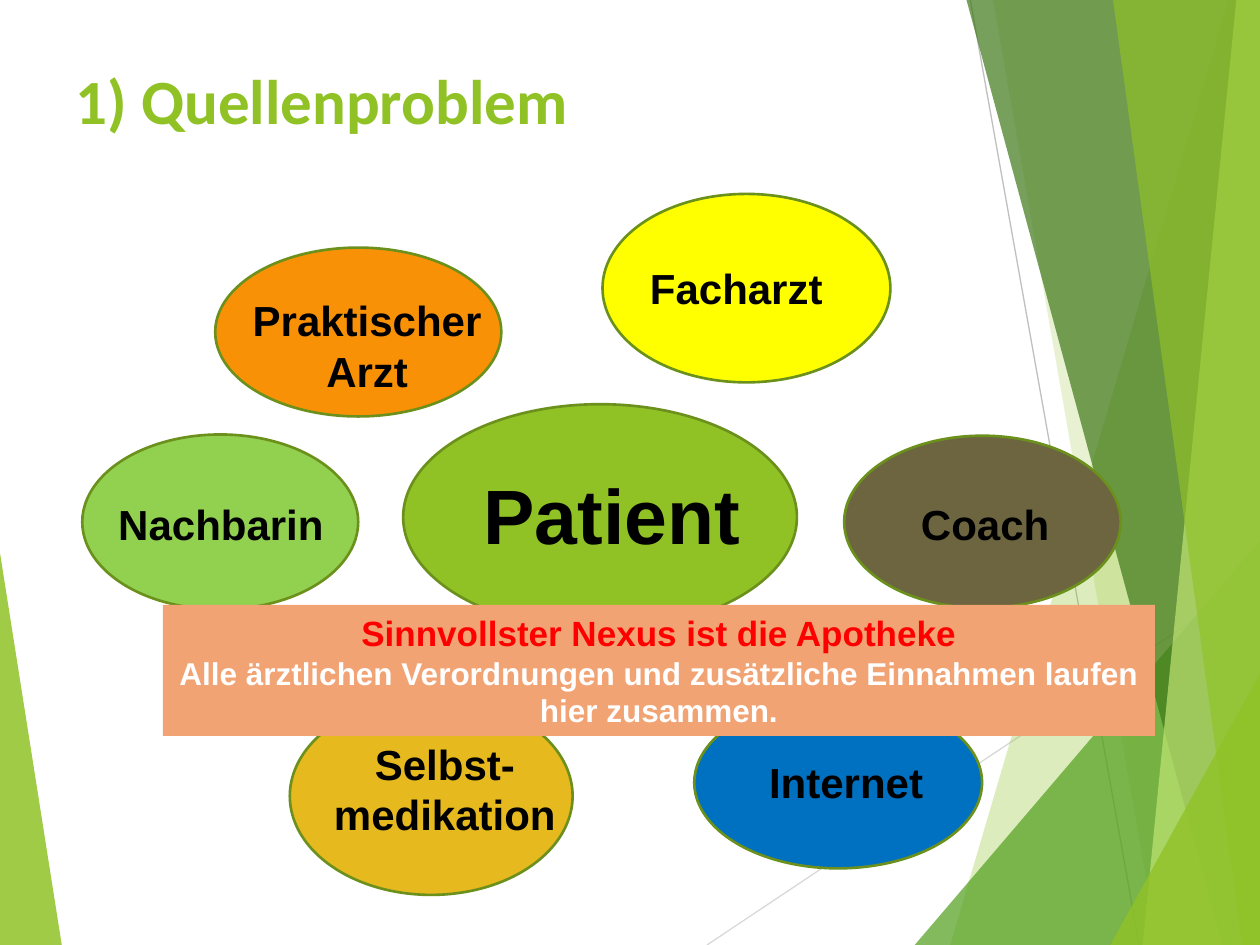
from dataclasses import dataclass

from lxml import etree
from pptx import Presentation
from pptx.dml.color import RGBColor
from pptx.enum.shapes import MSO_CONNECTOR, MSO_SHAPE
from pptx.enum.text import MSO_ANCHOR, PP_ALIGN
from pptx.oxml.ns import qn
from pptx.util import Pt

STRAIGHT = MSO_CONNECTOR.STRAIGHT
ELLIPSE, RECTANGLE = MSO_SHAPE.OVAL, MSO_SHAPE.RECTANGLE
TOP, MIDDLE = MSO_ANCHOR.TOP, MSO_ANCHOR.MIDDLE
LEFT, CENTER = PP_ALIGN.LEFT, PP_ALIGN.CENTER
WIDTH, HEIGHT = 720, 540

Point = tuple[float, float]
Box = tuple[float, float, float, float]


@dataclass(frozen=True)
class Theme:
    green: str = "90C226"
    leaf: str = "54A021"
    forest: str = "3F7819"
    lime: str = "C0E474"
    outline: str = "6B901C"
    black: str = "000000"
    white: str = "FFFFFF"
    red: str = "FF0000"
    salmon: str = "F1A374"
    title_font: str = "Calibri"
    body_font: str = "Arial"
    title_size: int = 36
    patient_size: int = 44
    source_size: int = 24
    headline_size: int = 20
    detail_size: int = 18


THEME = Theme()


@dataclass(frozen=True)
class Facet:
    points: list[Point]
    color: str
    opacity: int


@dataclass(frozen=True)
class Line:
    start: Point
    end: Point
    color: str


@dataclass(frozen=True)
class Label:
    text: str
    box: Box
    size: int = THEME.source_size
    align: PP_ALIGN = CENTER
    color: str = THEME.black
    font: str = THEME.body_font


@dataclass(frozen=True)
class Source:
    ellipse: Box
    fill: str
    label: Label


def panel(top_x: float, bottom_x: float) -> list[Point]:
    """Full-height band that reaches the right edge of the slide."""
    return [(top_x, 0), (bottom_x, HEIGHT), (WIDTH, HEIGHT), (WIDTH, 0)]


def corner(bottom_x: float, edge_y: float, edge_x: float = WIDTH) -> list[Point]:
    """Triangle in a bottom corner of the slide."""
    return [(bottom_x, HEIGHT), (edge_x, edge_y), (edge_x, HEIGHT)]


LEFT_FACET = Facet(corner(35.3, 316, 0), THEME.green, 85)
RIGHT_FACETS = [
    Facet(panel(702, 543), THEME.green, 30),
    Facet(panel(567.5, 661.5), THEME.green, 20),
    Facet(corner(522.7, 309), THEME.leaf, 72),
    Facet(panel(552.3, 698.5), THEME.forest, 70),
    Facet(panel(706.5, 653), THEME.lime, 70),
    Facet(panel(636, 710), THEME.green, 65),
    Facet(corner(634.5, 385), THEME.green, 80),
]
LINES = [
    Line((404, HEIGHT), (WIDTH, 329), "D9D9D9"),
    Line((554.5, 0), (651, HEIGHT), "BFBFBF"),
]
TITLE = Label("1) Quellenproblem", (36, 31.5, 648, 93.5), THEME.title_size,
              LEFT, THEME.green, THEME.title_font)
SOURCES = [
    Source((230.4, 231, 225, 129), THEME.green,
           Label("Patient", (269.3, 263.5, 255, 60.5), THEME.patient_size, LEFT)),
    Source((123, 141.5, 163.5, 96.5), "F99107",
           Label("Praktischer Arzt", (133, 165, 153.5, 65.5))),
    Source((482.4, 249, 158, 98.5), "6D6540",
           Label("Coach", (509, 281.5, 108, 36))),
    Source((47, 248.3, 157.7, 100), "92D050",
           Label("Nachbarin", (60.5, 281.5, 134.6, 36), align=LEFT)),
    Source((396.7, 398.2, 164.5, 98), "0070C0",
           Label("Internet", (425.5, 428.5, 116, 36))),
    Source((344.3, 110.8, 164.5, 107.7), "FFFF00",
           Label("Facharzt", (364.3, 146.3, 121.7, 36), align=LEFT)),
    Source((165.6, 398.4, 161.6, 113), "E6B91E",
           Label("Selbst-medikation", (181.5, 418.3, 145.4, 65.5))),
]
BANNER_BOX = (93, 345.6, 567, 75)
BANNER_LINES = [
    ("Sinnvollster Nexus ist die Apotheke", THEME.headline_size, THEME.red),
    ("Alle ärztlichen Verordnungen und zusätzliche Einnahmen laufen hier zusammen.",
     THEME.detail_size, THEME.white),
]


def to_points(values) -> list[Pt]:
    return [Pt(value) for value in values]


def paint(shape, color: str) -> None:
    shape.shadow.inherit = False
    shape.fill.solid()
    shape.fill.fore_color.rgb = RGBColor.from_string(color)


def draw_facet(shapes, facet: Facet) -> None:
    vertices = [to_points(point) for point in facet.points]
    builder = shapes.build_freeform(*vertices[0], scale=1.0)
    builder.add_line_segments(vertices[1:], close=True)
    shape = builder.convert_to_shape()
    paint(shape, facet.color)
    shape.line.fill.background()
    color = shape.element.spPr.find(qn("a:solidFill")).find(qn("a:srgbClr"))
    etree.SubElement(color, qn("a:alpha"), val=str(facet.opacity * 1000))


def draw_line(shapes, line: Line) -> None:
    connector = shapes.add_connector(STRAIGHT, *to_points(line.start + line.end))
    connector.line.width = Pt(0.75)
    connector.line.color.rgb = RGBColor.from_string(line.color)
    etree.SubElement(connector.element.spPr, qn("a:effectLst"))


def write(paragraph, text: str, size: int, color: str, align: PP_ALIGN, font: str) -> None:
    paragraph.alignment = align
    run = paragraph.add_run()
    run.text = text
    formats = {"name": font, "size": Pt(size), "bold": True}
    for attribute, value in formats.items():
        setattr(run.font, attribute, value)
    run.font.color.rgb = RGBColor.from_string(color)


def draw_label(shapes, label: Label) -> None:
    frame = shapes.add_textbox(*to_points(label.box)).text_frame
    frame.word_wrap = True
    frame.vertical_anchor = TOP
    write(frame.paragraphs[0], label.text, label.size, label.color, label.align, label.font)


def draw_ellipse(shapes, source: Source) -> None:
    ellipse = shapes.add_shape(ELLIPSE, *to_points(source.ellipse))
    paint(ellipse, source.fill)
    ellipse.line.width = Pt(1.5)
    ellipse.line.color.rgb = RGBColor.from_string(THEME.outline)


def draw_banner(shapes) -> None:
    banner = shapes.add_shape(RECTANGLE, *to_points(BANNER_BOX))
    paint(banner, THEME.salmon)
    banner.line.fill.background()
    frame = banner.text_frame
    frame.word_wrap = True
    frame.vertical_anchor = MIDDLE
    for index, (text, size, color) in enumerate(BANNER_LINES):
        paragraph = frame.add_paragraph() if index else frame.paragraphs[0]
        write(paragraph, text, size, color, CENTER, THEME.body_font)


def main() -> None:
    presentation = Presentation()
    presentation.slide_width, presentation.slide_height = Pt(WIDTH), Pt(HEIGHT)
    shapes = presentation.slides.add_slide(presentation.slide_layouts[6]).shapes

    # Background facets
    draw_facet(shapes, LEFT_FACET)
    for line in LINES:
        draw_line(shapes, line)
    for facet in RIGHT_FACETS:
        draw_facet(shapes, facet)

    # Title, then the patient and the sources around them
    draw_label(shapes, TITLE)
    for source in SOURCES:
        draw_ellipse(shapes, source)
        draw_label(shapes, source.label)

    # Conclusion
    draw_banner(shapes)
    presentation.save("out.pptx")


if __name__ == "__main__":
    main()
